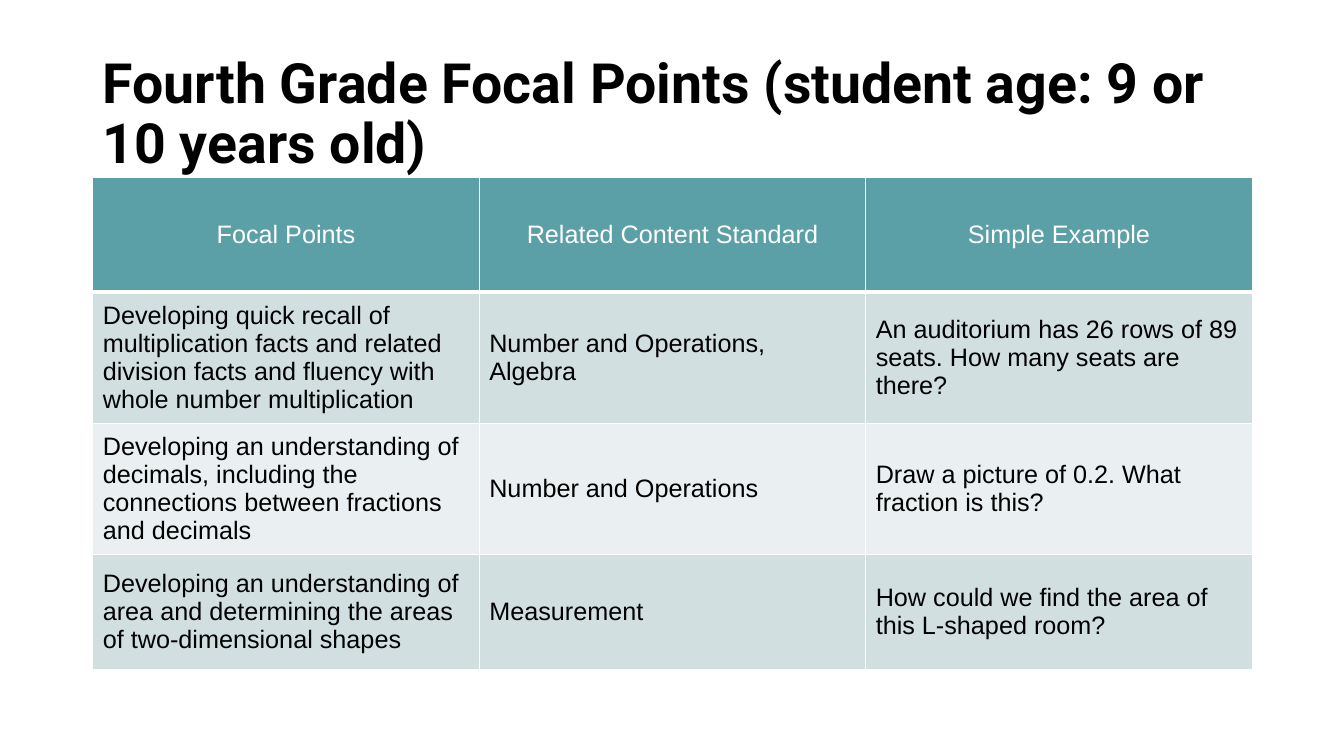
from lxml import etree
from pptx import Presentation
from pptx.dml.color import RGBColor
from pptx.enum.text import MSO_ANCHOR, PP_ALIGN
from pptx.oxml.ns import qn
from pptx.util import Inches, Pt

MIDDLE = MSO_ANCHOR.MIDDLE
LEFT, CENTER = PP_ALIGN.LEFT, PP_ALIGN.CENTER

BLACK, WHITE = "000000", "FFFFFF"
HEADER_FILL = "5CA0A7"
BAND_FILLS = ["D2DFE1", "EAF0F1"]

TITLE = "Fourth Grade Focal Points (student age: 9 or 10 years old)"
ROWS = [
    ["Focal Points", "Related Content Standard", "Simple Example"],
    ["Developing quick recall of multiplication facts and related division "
     "facts and fluency with whole number multiplication",
     "Number and Operations, Algebra",
     "An auditorium has 26 rows of 89 seats. How many seats are there?"],
    ["Developing an understanding of decimals, including the connections "
     "between fractions and decimals",
     "Number and Operations",
     "Draw a picture of 0.2. What fraction is this?"],
    ["Developing an understanding of area and determining the areas of "
     "two-dimensional shapes",
     "Measurement",
     "How could we find the area of this L-shaped room?"],
]


def rgb(color):
    return RGBColor.from_string(color)


def style_text(p, font, size, color, bold=False, align=LEFT):
    p.alignment = align
    f = p.runs[0].font
    f.name, f.size, f.bold = font, Pt(size), bold
    f.color.rgb = rgb(color)


def set_borders(cell, color, bottom_width):
    """Draw 1 pt cell borders, with a bottom border of the given width."""
    tcPr = cell._tc.get_or_add_tcPr()
    widths = {"lnL": 1, "lnR": 1, "lnT": 1, "lnB": bottom_width}
    for i, (side, width) in enumerate(widths.items()):
        ln = etree.Element(qn(f"a:{side}"), w=str(Pt(width)))
        fill = etree.SubElement(ln, qn("a:solidFill"))
        etree.SubElement(fill, qn("a:srgbClr"), val=color)
        tcPr.insert(i, ln)


def add_title(slide, left, top, width, height):
    box = slide.shapes.add_textbox(Inches(left), Inches(top), Inches(width), Inches(height))
    tf = box.text_frame
    tf.word_wrap = True
    tf.vertical_anchor = MIDDLE
    tf.text = TITLE
    p = tf.paragraphs[0]
    p.line_spacing = 0.9
    style_text(p, "Roboto", 39.6, BLACK, bold=True)


def add_focal_table(slide, left, top, width, row_height):
    frame = slide.shapes.add_table(
        len(ROWS), len(ROWS[0]), Inches(left), Inches(top),
        Inches(width), Inches(row_height * len(ROWS)))
    table = frame.table
    for r, texts in enumerate(ROWS):
        header = r == 0
        fill = HEADER_FILL if header else BAND_FILLS[(r - 1) % 2]
        for c, text in enumerate(texts):
            cell = table.cell(r, c)
            cell.text = text
            cell.vertical_anchor = MIDDLE
            cell.fill.solid()
            cell.fill.fore_color.rgb = rgb(fill)
            set_borders(cell, WHITE, 3 if header else 1)
            style_text(cell.text_frame.paragraphs[0], "Arial", 18,
                       WHITE if header else BLACK,
                       align=CENTER if header else LEFT)


def main():
    prs = Presentation()
    prs.slide_width, prs.slide_height = Inches(13.33), Inches(7.5)
    slide = prs.slides.add_slide(prs.slide_layouts[6])
    add_title(slide, 0.92, 0.66, 11.5, 0.97)
    add_focal_table(slide, 0.92, 1.76, 11.5, 1.14)
    prs.save("out.pptx")


if __name__ == "__main__":
    main()
